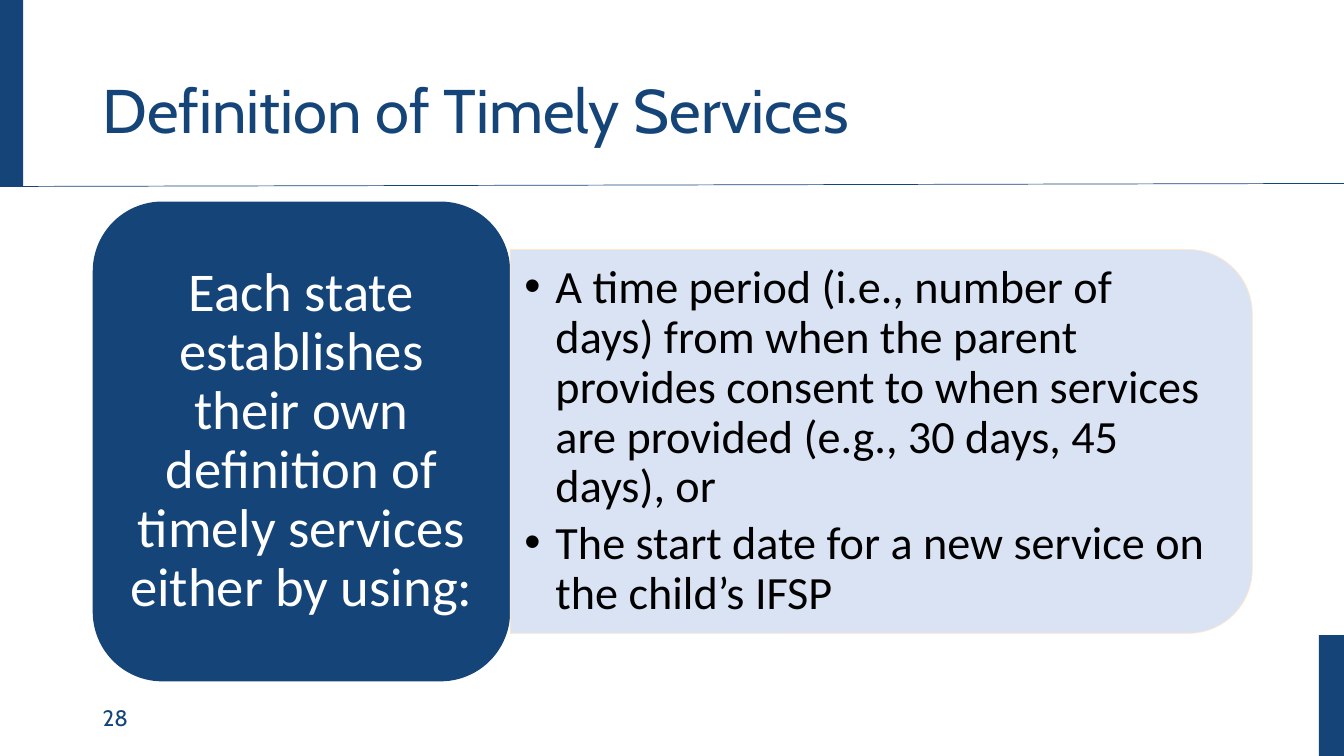
from lxml.etree import SubElement
from pptx import Presentation
from pptx.dml.color import RGBColor
from pptx.enum.shapes import MSO_CONNECTOR, MSO_SHAPE as SHAPE
from pptx.enum.text import MSO_ANCHOR as ANCHOR, PP_ALIGN as ALIGN
from pptx.oxml.ns import qn
from pptx.util import Inches, Pt

NAVY = RGBColor(0x15, 0x45, 0x78)
PALE_BLUE = RGBColor(0xDA, 0xE3, 0xF3)
CREAM = RGBColor(0xFF, 0xE8, 0xCC)
WHITE = RGBColor(0xFF, 0xFF, 0xFF)
BLACK = RGBColor(0, 0, 0)

WIDTH, HEIGHT = 13.33, 7.5
MARGIN = 0.92
BAR_WIDTH = 0.25
HEADER_HEIGHT = 1.85
LEAD_SHARE = 0.36  # share of the diagram's width
PANEL_SHARE = 0.8  # share of the diagram's height

LEAD = "Each state establishes their own definition of timely services either by using:"
OPTIONS = [
    "A time period (i.e., number of days) from when the parent provides consent "
    "to when services are provided (e.g., 30 days, 45 days), or",
    "The start date for a new service on the child’s IFSP",
]


def inches(*lengths):
    return [Inches(length) for length in lengths]


def add_filled(slide, kind, box, color):
    shape = slide.shapes.add_shape(kind, *inches(*box))
    shape.shadow.inherit = False
    shape.fill.solid()
    shape.fill.fore_color.rgb = color
    shape.line.fill.background()
    return shape


def set_frame(frame, side, edge):
    """Wrap and centre the text vertically, with the given insets."""
    layout = {"word_wrap": True, "vertical_anchor": ANCHOR.MIDDLE,
              "margin_left": Inches(side), "margin_right": Inches(side),
              "margin_top": Inches(edge), "margin_bottom": Inches(edge)}
    for name, value in layout.items():
        setattr(frame, name, value)


def write(paragraph, text, font, size, color, **layout):
    paragraph.text = text
    for name, value in layout.items():
        setattr(paragraph, name, value)
    for name, value in {"name": font, "size": Pt(size)}.items():
        setattr(paragraph.font, name, value)
    paragraph.font.color.rgb = color


def add_bullet(paragraph, indent):
    properties = paragraph._p.get_or_add_pPr()
    properties.set("marL", str(Inches(indent)))
    properties.set("indent", str(-Inches(indent)))
    SubElement(properties, qn("a:buFont"), typeface="Arial")
    SubElement(properties, qn("a:buChar"), char="•")


def add_decoration(slide):
    """Corner bars, header rule and slide number."""
    foot_height = 1.2
    add_filled(slide, SHAPE.RECTANGLE, (0, 0, BAR_WIDTH - 0.02, HEADER_HEIGHT), NAVY)
    add_filled(slide, SHAPE.RECTANGLE,
               (WIDTH - BAR_WIDTH, HEIGHT - foot_height, BAR_WIDTH, foot_height), NAVY)
    rule = slide.shapes.add_connector(
        MSO_CONNECTOR.STRAIGHT, *inches(0, HEADER_HEIGHT, WIDTH, HEADER_HEIGHT - 0.03))
    rule.line.color.rgb = NAVY
    rule.line.width = Pt(0.5)
    SubElement(rule._element.spPr, qn("a:effectLst"))
    number = slide.shapes.add_textbox(*inches(MARGIN, 6.92, 3, 0.4)).text_frame
    set_frame(number, 0.1, 0.05)
    write(number.paragraphs[0], "28", "Cabin", 16, NAVY)


def set_title(slide, box):
    title = slide.shapes.title
    title.left, title.top, title.width, title.height = inches(*box)
    set_frame(title.text_frame, 0.1, 0.05)
    write(title.text_frame.paragraphs[0], "Definition of Timely Services",
          "Cabin", 44, NAVY, alignment=ALIGN.LEFT, line_spacing=0.9)


def add_options_panel(slide, box):
    left, top, width, height = box
    # The shape rounds its top corners, so it is turned to round the right side.
    turned = (left + (width - height) / 2, top + (height - width) / 2, height, width)
    panel = add_filled(slide, SHAPE.ROUND_2_SAME_RECTANGLE, turned, PALE_BLUE)
    panel.rotation = 90
    panel.line.color.rgb = CREAM
    panel.line.width = Pt(0.5)

    inset = 0.19
    options = slide.shapes.add_textbox(
        *inches(left, top + inset, width - inset, height - 2 * inset)).text_frame
    set_frame(options, 0.14, 0.07)
    for index, text in enumerate(OPTIONS):
        option = options.add_paragraph() if index else options.paragraphs[0]
        add_bullet(option, 0.31)
        write(option, text, "Calibri", 33, BLACK, line_spacing=0.9, space_after=Pt(5))


def add_diagram(slide, box):
    left, top, width, height = box
    lead_width = width * LEAD_SHARE
    panel_height = height * PANEL_SHARE
    lead = add_filled(slide, SHAPE.ROUNDED_RECTANGLE, (left, top, lead_width, height), NAVY)
    set_frame(lead.text_frame, 0.16, 0.08)
    write(lead.text_frame.paragraphs[0], LEAD, "Calibri", 39, WHITE,
          alignment=ALIGN.CENTER, line_spacing=0.9)
    add_options_panel(slide, (left + lead_width, top + (height - panel_height) / 2,
                              width - lead_width, panel_height))


def main():
    deck = Presentation()
    deck.slide_width, deck.slide_height = inches(WIDTH, HEIGHT)
    slide = deck.slides.add_slide(deck.slide_layouts[5])
    add_decoration(slide)
    set_title(slide, (MARGIN, 0.4, 11.5, HEADER_HEIGHT - 0.4))
    add_diagram(slide, (MARGIN, 2, 11.5, 4.76))
    deck.save("out.pptx")


if __name__ == "__main__":
    main()
